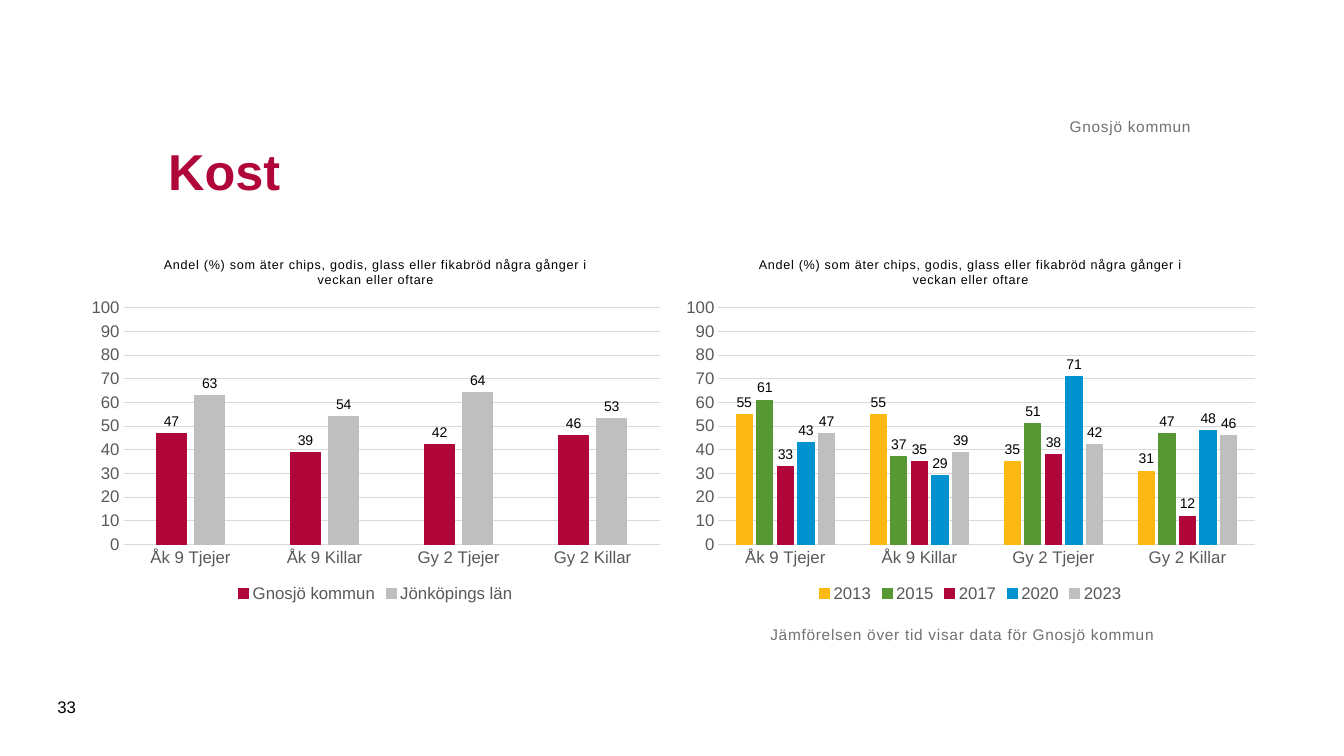
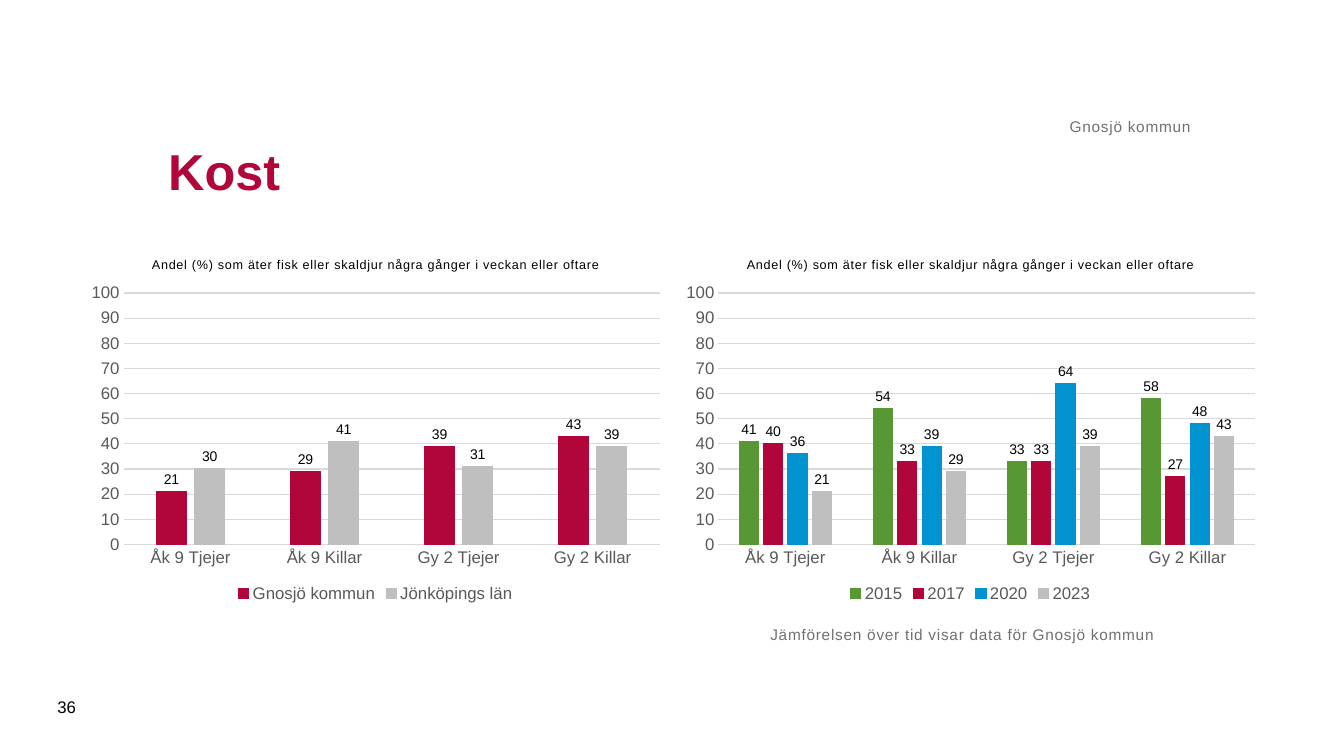
from pptx import Presentation
from pptx.chart.data import CategoryChartData
from pptx.dml.color import RGBColor
from pptx.enum import chart as ch, text
from pptx.util import Inches, Pt

FONT = "Arial"
HEX = {"red": "B1063A", "silver": "BFBFBF", "yellow": "FDB913", "green": "579835",
       "blue": "0093D0", "note": "717171", "axis": "595959", "grid": "D9D9D9",
       "black": "000000"}
# Colour of each series by name
TINT = {"Gnosjö kommun": "red", "Jönköpings län": "silver", "2013": "yellow",
        "2015": "green", "2017": "red", "2020": "blue", "2023": "silver"}
CATS = ["Åk 9 Tjejer", "Åk 9 Killar", "Gy 2 Tjejer", "Gy 2 Killar"]
LEFTS = [0.79, 6.69]
FMT = "#,##0;#,##0"
MID, TOP, LOW = text.MSO_ANCHOR.MIDDLE, text.MSO_ANCHOR.TOP, text.MSO_ANCHOR.BOTTOM

# Text boxes: left, top, width, height, size, colour, anchor, is a note
TITLE = (1.57, 0.98, 10.24, 1.42, 36, "red", MID, False)
PLACE = (1.57, 0.62, 10.24, 0.73, 11, "note", LOW, True)
NOTE = (7.64, 6.2, 5.31, 0.94, 11, "note", TOP, True)
NUMBER = (0.47, 6.81, 0.57, 0.4, 12, "black", MID, False)

PAGES = [
    ("33", "Andel (%) som äter chips, godis, glass eller fikabröd några gånger i veckan eller oftare",
     [{"Gnosjö kommun": [47, 39, 42, 46], "Jönköpings län": [63, 54, 64, 53]},
      {"2013": [55, 55, 35, 31], "2015": [61, 37, 51, 47], "2017": [33, 35, 38, 12],
       "2020": [43, 29, 71, 48], "2023": [47, 39, 42, 46]}]),
    ("36", "Andel (%) som äter fisk eller skaldjur några gånger i veckan eller oftare",
     [{"Gnosjö kommun": [21, 29, 39, 43], "Jönköpings län": [30, 41, 31, 39]},
      {"2015": [41, 54, 33, 58], "2017": [40, 33, 33, 27],
       "2020": [36, 39, 64, 48], "2023": [21, 29, 39, 43]}]),
]


def style(font, size, tint):
    font.name, font.size, font.bold = FONT, Pt(size), False
    font.color.rgb = RGBColor.from_string(HEX[tint])


def write(slide, words, look):
    x, y, w, h, size, tint, anchor, note = look
    frame = slide.shapes.add_textbox(Inches(x), Inches(y), Inches(w), Inches(h)).text_frame
    frame.word_wrap = True
    frame.vertical_anchor = anchor
    frame.text = words
    run = frame.paragraphs[0].runs[0]
    style(run.font, size, tint)
    if note:
        frame.margin_left = frame.margin_right = frame.margin_top = frame.margin_bottom = 0
        run.font._element.set("spc", "50")
    return frame.paragraphs[0]


deck = Presentation()
deck.slide_width, deck.slide_height = Inches(13.33), Inches(7.5)

for number, head, plots in PAGES:
    slide = deck.slides.add_slide(deck.slide_layouts[6])

    # Two column charts side by side
    for left, plot in zip(LEFTS, plots):
        data = CategoryChartData(number_format=FMT)
        data.categories = CATS
        for name, vals in plot.items():
            data.add_series(name, vals)
        chart = slide.shapes.add_chart(
            ch.XL_CHART_TYPE.COLUMN_CLUSTERED, Inches(left), Inches(2.4),
            Inches(5.87), Inches(3.62), data).chart
        style(chart.font, 10, "black")

        # Chart title
        frame = chart.chart_title.text_frame
        frame.text = head
        run = frame.paragraphs[0].runs[0]
        style(run.font, 9, "black")
        run.font._element.set("spc", "50")

        # Legend
        chart.has_legend = True
        chart.legend.position = ch.XL_LEGEND_POSITION.BOTTOM
        chart.legend.include_in_layout = False
        style(chart.legend.font, 12, "axis")

        # Axes and grid
        cat, val = chart.category_axis, chart.value_axis
        for axis in (cat, val):
            axis.major_tick_mark = axis.minor_tick_mark = ch.XL_TICK_MARK.NONE
            style(axis.tick_labels.font, 12, "axis")
        val.minimum_scale, val.maximum_scale, val.major_unit = 0, 100, 10
        val.tick_labels.number_format = FMT
        val.tick_labels.number_format_is_linked = False
        val.format.line.fill.background()
        for line in (cat.format.line, val.major_gridlines.format.line):
            line.color.rgb = RGBColor.from_string(HEX["grid"])
            line.width = Pt(0.75)

        # Bars and labels
        bars = chart.plots[0]
        bars.gap_width, bars.overlap, bars.vary_by_categories = 219, -27, False
        for row in bars.series:
            shade = RGBColor.from_string(HEX[TINT[row.name]])
            row.format.fill.solid()
            row.format.fill.fore_color.rgb = shade
            row.format.line.color.rgb = shade
            row.format.line.width = Pt(0.75)
            tags = row.data_labels
            tags.show_value = True
            tags.position = ch.XL_LABEL_POSITION.OUTSIDE_END
            tags.number_format, tags.number_format_is_linked = FMT, False
            style(tags.font, 10, "black")

    # Heading, place, note and page number
    write(slide, "Kost", TITLE).runs[0].font.bold = True
    write(slide, "Jämförelsen över tid visar data för Gnosjö kommun", NOTE)
    write(slide, "Gnosjö kommun", PLACE).alignment = text.PP_ALIGN.RIGHT
    write(slide, number, NUMBER)

deck.save("out.pptx")
